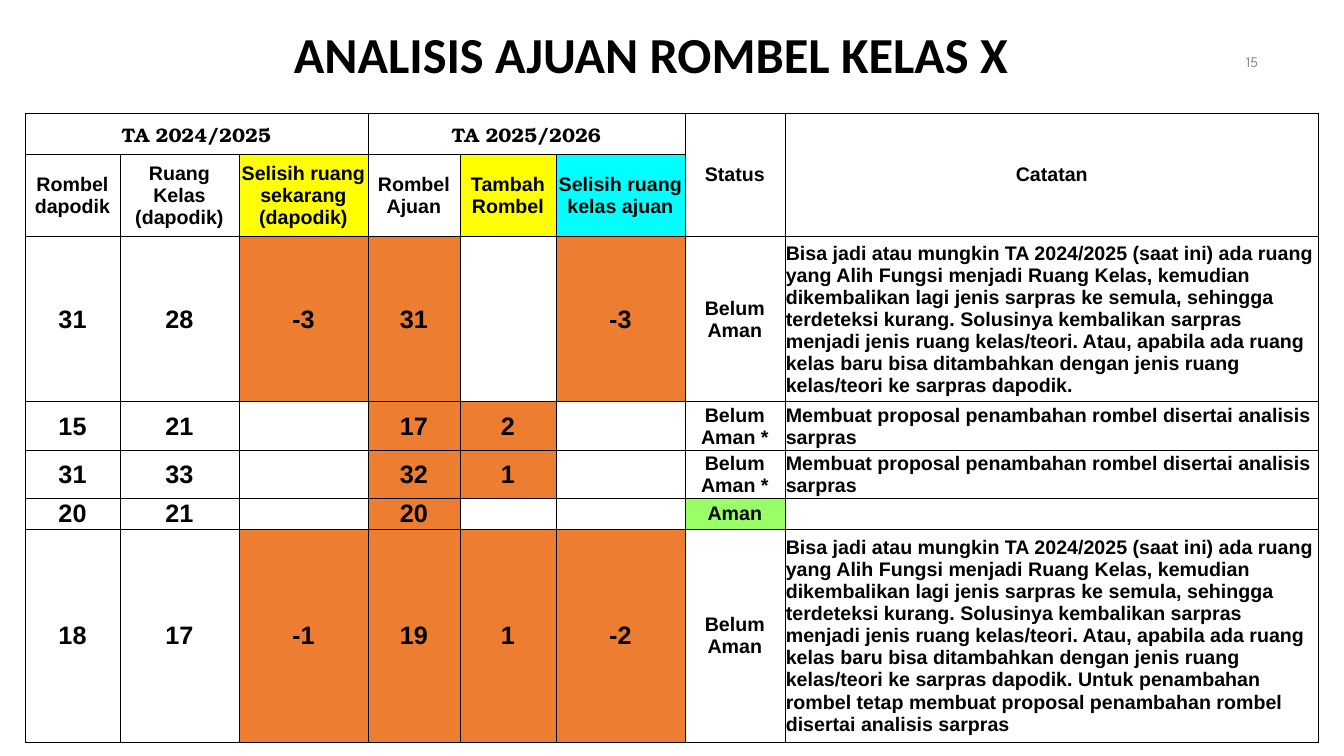
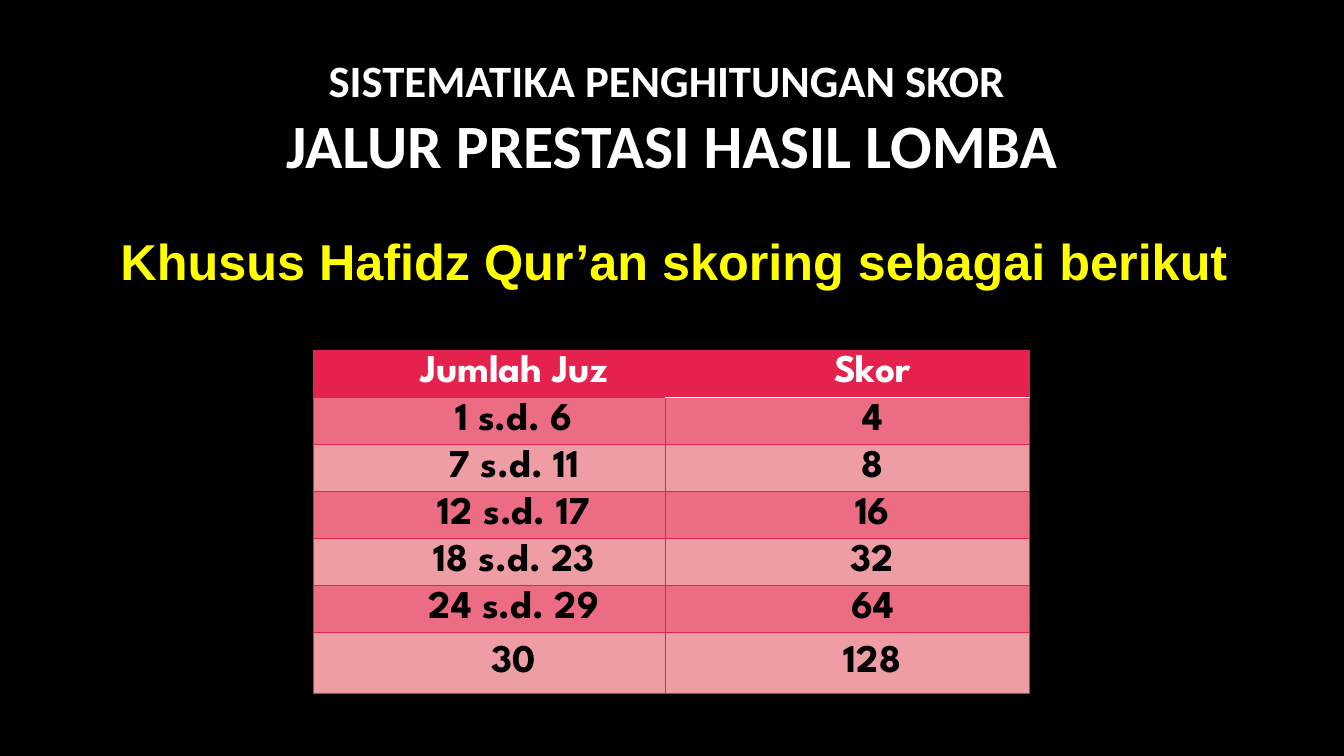
from pptx import Presentation
from pptx.dml.color import RGBColor
from pptx.enum.text import MSO_ANCHOR, PP_ALIGN
from pptx.oxml import parse_xml
from pptx.oxml.ns import nsdecls
from pptx.util import Emu, Pt

EMU_PER_PX = 914400 / 100.8
BLACK, WHITE, YELLOW, CYAN = "000000", "FFFFFF", "FFFF00", "00FFFF"
ORANGE, GREEN, GREY = "ED7D31", "99FF66", "8C8C8C"
RED, RED_DARK_BAND, RED_LIGHT_BAND = "E5224E", "EC6C83", "EF9DA5"
TITLE_FONT, BODY_FONT = "Calibri", "Arial"
SERIF_FONT, GEOMETRIC_FONT = "TeX Gyre Bonum", "League Spartan"

ROOM_NOTE = (
    "Bisa jadi atau mungkin TA 2024/2025 (saat ini) ada ruang yang Alih Fungsi menjadi "
    "Ruang Kelas, kemudian dikembalikan lagi jenis sarpras ke semula, sehingga terdeteksi "
    "kurang. Solusinya kembalikan sarpras menjadi jenis ruang kelas/teori. Atau, apabila "
    "ada ruang kelas baru bisa ditambahkan dengan jenis ruang kelas/teori ke sarpras dapodik."
)
PROPOSAL_NOTE = "Membuat proposal penambahan rombel disertai analisis sarpras"
EXTRA_NOTE = " Untuk penambahan rombel tetap membuat proposal penambahan rombel disertai analisis sarpras"

CLASS_ROWS = [
    ["TA 2024/2025", "", "", "TA 2025/2026", "", "", "Status", "Catatan"],
    ["Rombel dapodik", "Ruang Kelas (dapodik)", "Selisih ruang sekarang (dapodik)",
     "Rombel Ajuan", "Tambah Rombel", "Selisih ruang kelas ajuan", "", ""],
    ["31", "28", "-3", "31", "", "-3", "Belum Aman", ROOM_NOTE],
    ["15", "21", "", "17", "2", "", "Belum Aman *", PROPOSAL_NOTE],
    ["31", "33", "", "32", "1", "", "Belum Aman *", PROPOSAL_NOTE],
    ["20", "21", "", "20", "", "", "Aman", ""],
    ["18", "17", "-1", "19", "1", "-2", "Belum Aman", ROOM_NOTE + EXTRA_NOTE],
]
CLASS_COLS = [95, 119, 129, 92, 96, 129, 100, 534]
CLASS_HEIGHTS = [41, 82, 155, 45, 45, 30, 199]
CLASS_MERGES = [((0, 0), (0, 2)), ((0, 3), (0, 5)), ((0, 6), (1, 6)), ((0, 7), (1, 7))]
HEADING_FILLS = {2: YELLOW, 4: YELLOW, 5: CYAN}
STATUS_COL, NOTE_COL = 6, 7

SCORE_ROWS = [
    ["Jumlah Juz", "Skor"],
    ["1 s.d. 6", "4"],
    ["7 s.d. 11", "8"],
    ["12 s.d. 17", "16"],
    ["18 s.d. 23", "32"],
    ["24 s.d. 29", "64"],
    ["30", "128"],
]
SCORE_COLS = [352, 365]
SCORE_HEIGHTS = [47] * 6 + [61]


def px(n):
    return Emu(round(n * EMU_PER_PX))


def rgb(color):
    return RGBColor.from_string(color)


def style(p, size, font, color, bold=True, align=PP_ALIGN.CENTER):
    p.alignment = align
    p.font.size = Pt(size)
    p.font.name = font
    p.font.bold = bold
    p.font.color.rgb = rgb(color)


def add_slide(prs, background):
    s = prs.slides.add_slide(prs.slide_layouts[6])
    s.background.fill.solid()
    s.background.fill.fore_color.rgb = rgb(background)
    return s


def add_text(s, box, lines, font, color, anchor=MSO_ANCHOR.TOP, **options):
    """Add a text box; lines holds (text, size) pairs, one per paragraph."""
    tf = s.shapes.add_textbox(*map(px, box)).text_frame
    tf.word_wrap = True
    tf.vertical_anchor = anchor
    for i, (text, size) in enumerate(lines):
        p = tf.add_paragraph() if i else tf.paragraphs[0]
        p.text = text
        style(p, size, font, color, **options)


def add_table(s, left, top, cols, heights):
    table = s.shapes.add_table(len(heights), len(cols), px(left), px(top),
                               px(sum(cols)), px(sum(heights))).table
    table.first_row = table.horz_banding = False
    for col, width in zip(table.columns, cols):
        col.width = px(width)
    for row, height in zip(table.rows, heights):
        row.height = px(height)
    return table


def fill_cell(cell, text, fill, margins, borders, border_width):
    """Set text, fill and borders; borders maps the sides L, R, T, B to colours."""
    cell.margin_left, cell.margin_top, cell.margin_right, cell.margin_bottom = map(px, margins)
    cell.vertical_anchor = MSO_ANCHOR.MIDDLE
    tcPr = cell._tc.get_or_add_tcPr()
    for side, color in borders.items():
        tcPr.append(parse_xml(
            f'<a:ln{side} {nsdecls("a")} w="{Pt(border_width)}"><a:solidFill>'
            f'<a:srgbClr val="{color}"/></a:solidFill></a:ln{side}>'))
    if fill:
        cell.fill.solid()
        cell.fill.fore_color.rgb = rgb(fill)
    else:
        cell.fill.background()
    p = cell.text_frame.paragraphs[0]
    p.text = text
    return p


def class_fill(row, col, text):
    if row == 1:
        return HEADING_FILLS.get(col)
    if row > 1 and text and 2 <= col < STATUS_COL:
        return ORANGE
    return GREEN if text == "Aman" else None


def class_slide(prs):
    s = add_slide(prs, WHITE)
    add_text(s, (966, 42, 302, 40), [("15", 10.5)], GEOMETRIC_FONT, GREY,
             MSO_ANCHOR.MIDDLE, bold=False, align=PP_ALIGN.RIGHT)
    table = add_table(s, 25, 113, CLASS_COLS, CLASS_HEIGHTS)
    for r, row in enumerate(CLASS_ROWS):
        for c, text in enumerate(row):
            p = fill_cell(table.cell(r, c), text, class_fill(r, c, text),
                          (1, 1, 1, 0), dict.fromkeys("LRTB", BLACK), 0.5)
            style(p, 18 if r > 1 and c < STATUS_COL and text else 14,
                  SERIF_FONT if r == 0 and c < STATUS_COL else BODY_FONT, BLACK,
                  align=PP_ALIGN.LEFT if r > 1 and c == NOTE_COL else PP_ALIGN.CENTER)
    for first, last in CLASS_MERGES:
        table.cell(*first).merge(table.cell(*last))
    add_text(s, (157, 18, 1000, 72), [("ANALISIS AJUAN ROMBEL KELAS X ", 36)], TITLE_FONT, BLACK)


def score_slide(prs):
    s = add_slide(prs, BLACK)
    add_text(s, (0, 48, 1344, 139),
             [("SISTEMATIKA PENGHITUNGAN SKOR ", 32), ("JALUR PRESTASI HASIL LOMBA", 44)],
             TITLE_FONT, WHITE)
    add_text(s, (56, 224, 1237, 72), [("Khusus Hafidz Qur’an skoring sebagai berikut", 36)],
             BODY_FONT, YELLOW, MSO_ANCHOR.MIDDLE)
    table = add_table(s, 313, 350, SCORE_COLS, SCORE_HEIGHTS)
    for r, row in enumerate(SCORE_ROWS):
        fill = (RED_DARK_BAND if r % 2 else RED_LIGHT_BAND) if r else RED
        for c, text in enumerate(row):
            borders = dict.fromkeys("LRTB", RED)
            if c == 1 and r < 2:
                borders["T" if r else "B"] = WHITE
            p = fill_cell(table.cell(r, c), text, fill, (57, 0, 7, 0), borders, 0.75)
            style(p, 28, GEOMETRIC_FONT, BLACK if r else WHITE)


def main():
    prs = Presentation()
    prs.slide_width, prs.slide_height = px(1344), px(756)
    class_slide(prs)
    score_slide(prs)
    prs.save("out.pptx")


if __name__ == "__main__":
    main()
